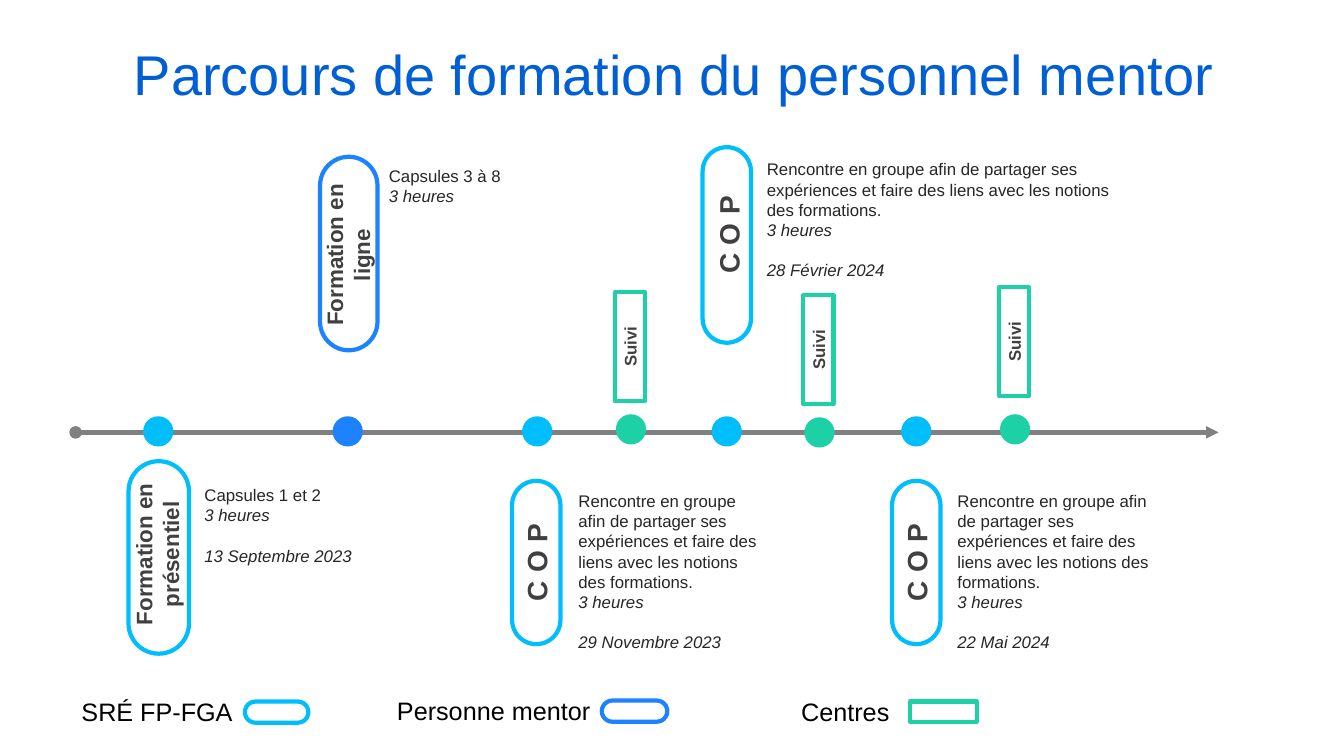
from dataclasses import dataclass

from lxml.etree import SubElement
from pptx import Presentation
from pptx.dml.color import RGBColor
from pptx.enum.shapes import MSO_CONNECTOR as CONN, MSO_SHAPE as SHAPE
from pptx.enum.text import MSO_ANCHOR as ANCHOR, PP_ALIGN as ALIGN
from pptx.oxml.ns import qn
from pptx.util import Inches, Pt

COLORS = {
    "title": "005FD4", "axis": "808080", "label": "404040", "body": "262626",
    "black": "000000", "white": "FFFFFF",
    "sre": "00BDFB", "mentor": "1C82FF", "centre": "1ED0A6",
}
COLS, ROWS = 133.33, 75          # grid of the slide
CELL = Inches(0.1)               # one column or row
AXIS_ROW, FIRST_STAGE, STAGE_STEP = 42.8, 15.7, 18.8
DOT = 3
MEETING = ("Rencontre en groupe afin de partager ses expériences et faire "
           "des liens avec les notions des formations.")


@dataclass
class Box:
    """Centre and size in grid cells."""
    x: float
    y: float
    w: float
    h: float

    def emu(self) -> list[int]:
        cells = (self.x - self.w / 2, self.y - self.h / 2, self.w, self.h)
        return [round(c * CELL) for c in cells]


def corner(left: float, top: float, w: float, h: float) -> Box:
    return Box(left + w / 2, top + h / 2, w, h)


@dataclass
class Stage:
    owner: str
    label: str
    pill: Box
    label_box: Box
    text: str
    text_box: Box
    date: str = ""
    size: int = 20
    spacing: int = 6


@dataclass
class FollowUp:
    x: float
    dot_y: float
    box_y: float


@dataclass
class LegendItem:
    owner: str
    label: str
    text_box: Box
    key: Box
    wrap: bool = True


STAGES = [
    Stage("sre", "Formation en présentiel", Box(15.75, 55.3, 19.1, 6),
          Box(15.55, 55, 17.1, 6.4), "Capsules 1 et 2",
          corner(19.3, 47.6, 29.4, 9.1), "13 Septembre 2023", 16, 0),
    Stage("mentor", "Formation en ligne", Box(34.6, 25.15, 19.2, 5.7),
          Box(34.5, 25.3, 18.4, 6.4), "Capsules 3 à 8",
          corner(37.6, 15.9, 15.3, 7.1), "", 16, 0),
    Stage("sre", "COP", Box(53.2, 55.8, 16.2, 4.8), Box(53.2, 55.8, 13.2, 4.4),
          MEETING, corner(56.4, 48.2, 20.3, 17.2), "29 Novembre 2023"),
    Stage("sre", "COP", Box(72.1, 24.3, 19.4, 4.8), Box(72.25, 23.3, 18.5, 4.4),
          MEETING, corner(75.1, 15.3, 38, 13.1), "28 Février 2024"),
    Stage("sre", "COP", Box(90.9, 55.8, 16.2, 4.8), Box(90.9, 55.8, 13.2, 4.4),
          MEETING, corner(94, 48.2, 21.7, 17.2), "22 Mai 2024"),
]
FOLLOW_UPS = [FollowUp(62.6, 42.6, 34.4), FollowUp(81.3, 42.9, 34.7),
              FollowUp(100.7, 42.6, 33.9)]
LEGEND = [
    LegendItem("sre", "SRÉ FP-FGA", corner(7.1, 68.6, 17.5, 4),
               corner(24.3, 69.6, 6.3, 2.1)),
    LegendItem("mentor", "Personne mentor", corner(38.4, 68.5, 21.4, 4),
               corner(59.7, 69.5, 6.5, 2.1), False),
    LegendItem("centre", "Centres", corner(78.5, 68.6, 14, 4),
               corner(90.3, 69.6, 6.6, 2)),
]


def rgb(name: str) -> RGBColor:
    return RGBColor.from_string(COLORS[name])


def write(p, text: str, *, size: float, color: str, bold=False, italic=False,
          spacing=0, align=ALIGN.LEFT, before=0) -> None:
    p.alignment, p.space_before = align, Pt(before)
    r = p.add_run()
    r.text = text
    f = r.font
    f.name, f.size, f.bold, f.italic = "Arial", Pt(size), bold, italic
    f.color.rgb = rgb(color)
    if spacing:
        f._element.set("spc", str(spacing * 100))


def text_frame(s, box: Box, *, anchor=ANCHOR.TOP, rotation=0, wrap=True):
    sp = s.shapes.add_textbox(*box.emu())
    sp.rotation = rotation
    tf = sp.text_frame
    tf.word_wrap, tf.vertical_anchor = wrap, anchor
    return tf


def outline(s, kind, box: Box, color: str, rotation=0):
    sp = s.shapes.add_shape(kind, *box.emu())
    sp.shadow.inherit = False
    sp.rotation = rotation
    sp.fill.solid()
    sp.fill.fore_color.rgb = rgb("white")
    sp.line.color.rgb, sp.line.width = rgb(color), Pt(3)
    if kind == SHAPE.ROUNDED_RECTANGLE:
        sp.adjustments[0] = 0.5
    return sp


def dot(s, x: float, y: float, color: str) -> None:
    sp = s.shapes.add_shape(SHAPE.OVAL, *Box(x, y, DOT, DOT).emu())
    sp.shadow.inherit = False
    sp.fill.solid()
    sp.fill.fore_color.rgb = rgb(color)
    sp.line.fill.background()


def draw_axis(s) -> None:
    y = round(42.9 * CELL)
    ln = s.shapes.add_connector(CONN.STRAIGHT, round(7.5 * CELL), y,
                                round(120.9 * CELL), y)
    ln.line.color.rgb, ln.line.width = rgb("axis"), Pt(3)
    for tag, kind in (("a:headEnd", "oval"), ("a:tailEnd", "triangle")):
        SubElement(ln.line._get_or_add_ln(), qn(tag), type=kind)
    SubElement(ln._element.spPr, qn("a:effectLst"))


def draw_stage(s, x: float, st: Stage) -> None:
    dot(s, x, AXIS_ROW, st.owner)
    outline(s, SHAPE.ROUNDED_RECTANGLE, st.pill, st.owner, 270)
    tf = text_frame(s, st.label_box, anchor=ANCHOR.MIDDLE, rotation=270)
    write(tf.paragraphs[0], st.label, size=st.size, color="label", bold=True,
          spacing=st.spacing, align=ALIGN.CENTER)
    tf = text_frame(s, st.text_box)
    write(tf.paragraphs[0], st.text, size=12, color="body")
    write(tf.add_paragraph(), "3 heures", size=12, color="body", italic=True)
    if st.date:
        write(tf.add_paragraph(), st.date, size=12, color="body", italic=True,
              before=14.4)


def draw_follow_up(s, fu: FollowUp) -> None:
    dot(s, fu.x, fu.dot_y, "centre")
    sp = outline(s, SHAPE.RECTANGLE, Box(fu.x - 0.1, fu.box_y, 10.8, 3),
                 "centre", 270)
    tf = sp.text_frame
    tf.vertical_anchor = ANCHOR.MIDDLE
    write(tf.paragraphs[0], "Suivi", size=12, color="label", bold=True,
          align=ALIGN.CENTER)


def draw_legend(s, item: LegendItem) -> None:
    tf = text_frame(s, item.text_box, wrap=item.wrap)
    write(tf.paragraphs[0], item.label, size=18, color="black")
    kind = SHAPE.RECTANGLE if item.owner == "centre" else SHAPE.ROUNDED_RECTANGLE
    outline(s, kind, item.key, item.owner)


def main() -> None:
    prs = Presentation()
    prs.slide_width, prs.slide_height = round(COLS * CELL), ROWS * CELL
    s = prs.slides.add_slide(prs.slide_layouts[6])

    # Title
    tf = text_frame(s, corner(3.5, 3.7, 126.6, 7.9), anchor=ANCHOR.MIDDLE)
    p = tf.paragraphs[0]
    write(p, "Parcours de formation du personnel mentor", size=40,
          color="title", align=ALIGN.CENTER, before=10)
    p.line_spacing = 0.9

    # Timeline
    draw_axis(s)
    for i, stage in enumerate(STAGES):
        draw_stage(s, FIRST_STAGE + i * STAGE_STEP, stage)
    for follow_up in FOLLOW_UPS:
        draw_follow_up(s, follow_up)

    # Legend
    for item in LEGEND:
        draw_legend(s, item)
    prs.save("out.pptx")


if __name__ == "__main__":
    main()
